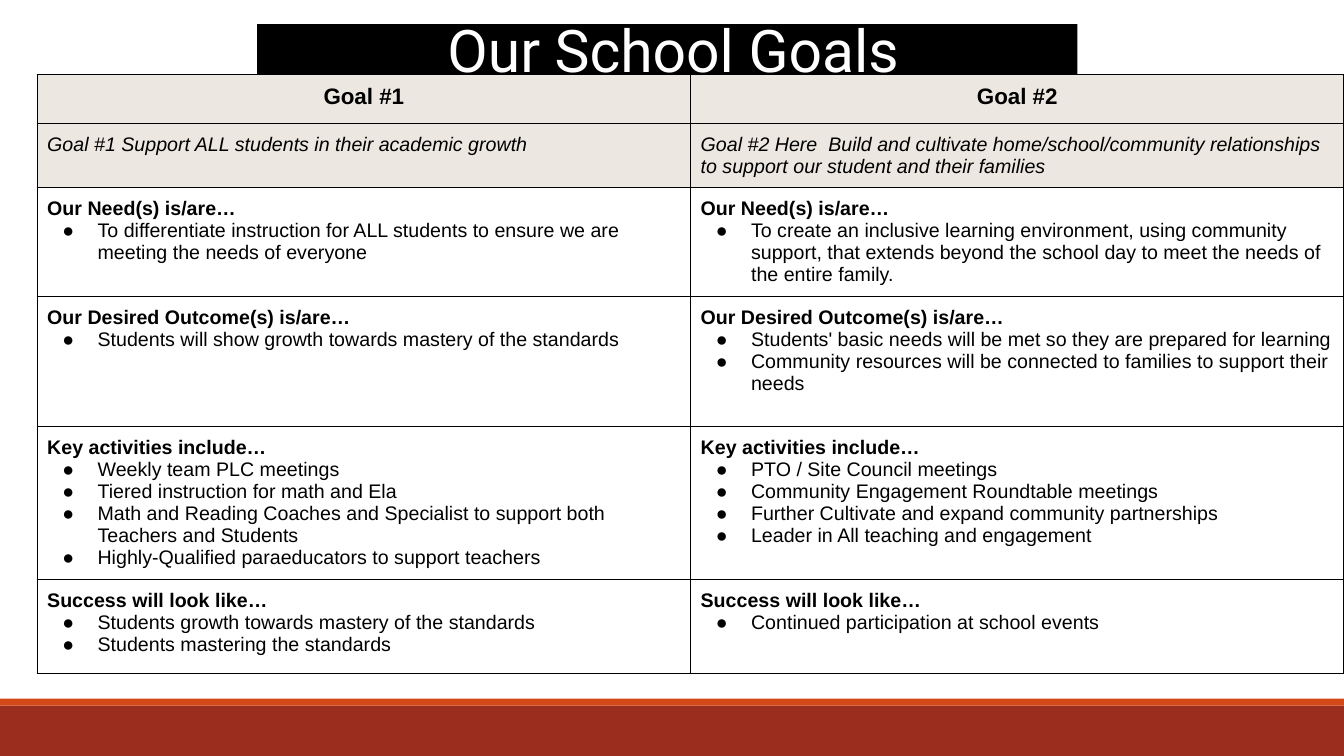
import pptx
import pptx.util
import pptx.dml.color
import pptx.enum.shapes
import pptx.enum.text
import pptx.oxml
import pptx.oxml.ns
from lxml import etree

Pt = pptx.util.Pt
qn = pptx.oxml.ns.qn
ALIGN = pptx.enum.text.PP_ALIGN

COLORS = {"black": "000000", "white": "FFFFFF", "header": "ECE7E0",
          "footer": "9B2D1F", "stripe": "D34817"}
SLIDE_W, SLIDE_H = 960, 540
ROW_HEIGHTS = [35, 45.7, 77.1, 92.9, 109.3, 67.1]
COL_WIDTH = 466.8

HEADINGS = ["Our Need(s) is/are…", "Our Desired Outcome(s) is/are…",
            "Key activities include…", "Success will look like…"]
GOALS = [
    {"name": "Goal #1",
     "aim": "Goal #1 Support ALL students in their academic growth",
     "points": [
         ["To differentiate instruction for ALL students to ensure we are "
          "meeting the needs of everyone"],
         ["Students will show growth towards mastery of the standards"],
         ["Weekly team PLC meetings",
          "Tiered instruction for math and Ela",
          "Math and Reading Coaches and Specialist to support both "
          "Teachers and Students",
          "Highly-Qualified paraeducators to support teachers"],
         ["Students growth towards mastery of the standards",
          "Students mastering the standards"]]},
    {"name": "Goal #2",
     "aim": "Goal #2 Here  Build and cultivate home/school/community "
            "relationships to support our student and their families",
     "points": [
         ["To create an inclusive learning environment, using community "
          "support, that extends beyond the school day to meet the needs of "
          "the entire family."],
         ["Students' basic needs will be met so they are prepared for learning",
          "Community resources will be connected to families to support their "
          "needs"],
         ["PTO / Site Council meetings",
          "Community Engagement Roundtable meetings",
          "Further Cultivate and expand community partnerships",
          "Leader in All teaching and engagement"],
         ["Continued participation at school events"]]},
]


def rgb(name):
    return pptx.dml.color.RGBColor.from_string(COLORS[name])


def add_run(p, text, size, color="black", font="Arial", bold=False, italic=False):
    r = p.add_run()
    r.text = text
    r.font.size, r.font.name = Pt(size), font
    r.font.bold, r.font.italic = bold, italic
    r.font.color.rgb = rgb(color)


def add_bar(s, top, height, color):
    sp = s.shapes.add_shape(pptx.enum.shapes.MSO_SHAPE.RECTANGLE,
                            0, Pt(top), Pt(SLIDE_W), Pt(height))
    sp.shadow.inherit = False
    sp.fill.solid()
    sp.fill.fore_color.rgb = rgb(color)
    sp.line.fill.background()


def set_title(s, text):
    sp = s.shapes.title
    sp.left, sp.top, sp.width, sp.height = Pt(183.6), Pt(17.3), Pt(586), Pt(36)
    # Slanted outline
    geom = etree.SubElement(sp.element.spPr, qn("a:prstGeom"), prst="parallelogram")
    guides = etree.SubElement(geom, qn("a:avLst"))
    etree.SubElement(guides, qn("a:gd"), name="adj", fmla="val 40300")
    sp.fill.solid()
    sp.fill.fore_color.rgb = rgb("black")
    tf = sp.text_frame
    tf.auto_size = pptx.enum.text.MSO_AUTO_SIZE.NONE
    tf.word_wrap = True
    tf.vertical_anchor = pptx.enum.text.MSO_ANCHOR.MIDDLE
    tf.margin_left, tf.margin_right = Pt(15.8), Pt(7.2)
    tf.margin_top = tf.margin_bottom = Pt(3.6)
    p = tf.paragraphs[0]
    p.alignment = ALIGN.CENTER
    add_run(p, text, 42, "white", "Roboto")


def format_cell(cell, fill=None):
    cell.margin_left = cell.margin_right = Pt(7.2)
    cell.margin_top = cell.margin_bottom = Pt(7.2)
    tcPr = cell._tc.get_or_add_tcPr()
    for side in ("lnL", "lnR", "lnT", "lnB"):
        ln = etree.SubElement(tcPr, qn("a:" + side), w=str(Pt(1)))
        solid = etree.SubElement(ln, qn("a:solidFill"))
        etree.SubElement(solid, qn("a:srgbClr"), val=COLORS["black"])
    if fill:
        cell.fill.solid()
        cell.fill.fore_color.rgb = rgb(fill)
    else:
        cell.fill.background()


def add_bullet(tf, text):
    p = tf.add_paragraph()
    pPr = p._p.get_or_add_pPr()
    pPr.set("marL", str(Pt(36)))
    pPr.set("indent", str(Pt(-25.2)))
    color = etree.SubElement(pPr, qn("a:buClr"))
    etree.SubElement(color, qn("a:srgbClr"), val=COLORS["black"])
    etree.SubElement(pPr, qn("a:buFont"), typeface="Arial")
    etree.SubElement(pPr, qn("a:buChar"), char="●")
    add_run(p, text, 14)


def fill_goal(table, col, goal):
    # Name and aim
    cell = table.cell(0, col)
    format_cell(cell, "header")
    p = cell.text_frame.paragraphs[0]
    p.alignment = ALIGN.CENTER
    add_run(p, goal["name"], 16, bold=True)
    cell = table.cell(1, col)
    format_cell(cell, "header")
    add_run(cell.text_frame.paragraphs[0], goal["aim"], 14, italic=True)
    # Headed bullet lists
    for row, (heading, points) in enumerate(zip(HEADINGS, goal["points"]), 2):
        cell = table.cell(row, col)
        format_cell(cell)
        tf = cell.text_frame
        add_run(tf.paragraphs[0], heading, 14, bold=True)
        for point in points:
            add_bullet(tf, point)


def add_goal_table(s):
    table = s.shapes.add_table(len(ROW_HEIGHTS), len(GOALS), Pt(26.5), Pt(53.3),
                               Pt(COL_WIDTH * len(GOALS)),
                               Pt(sum(ROW_HEIGHTS))).table
    table.first_row = table.horz_banding = False
    for row, height in zip(table.rows, ROW_HEIGHTS):
        row.height = Pt(height)
    for col, goal in enumerate(GOALS):
        table.columns[col].width = Pt(COL_WIDTH)
        fill_goal(table, col, goal)


def main():
    prs = pptx.Presentation()
    prs.slide_width, prs.slide_height = Pt(SLIDE_W), Pt(SLIDE_H)
    s = prs.slides.add_slide(prs.slide_layouts[5])
    s.background.fill.solid()
    s.background.fill.fore_color.rgb = rgb("white")
    # Footer bands
    add_bar(s, 504, 36, "footer")
    add_bar(s, 499, 5, "stripe")
    # Title and goals
    set_title(s, "Our School Goals")
    add_goal_table(s)
    prs.save("out.pptx")


if __name__ == "__main__":
    main()
